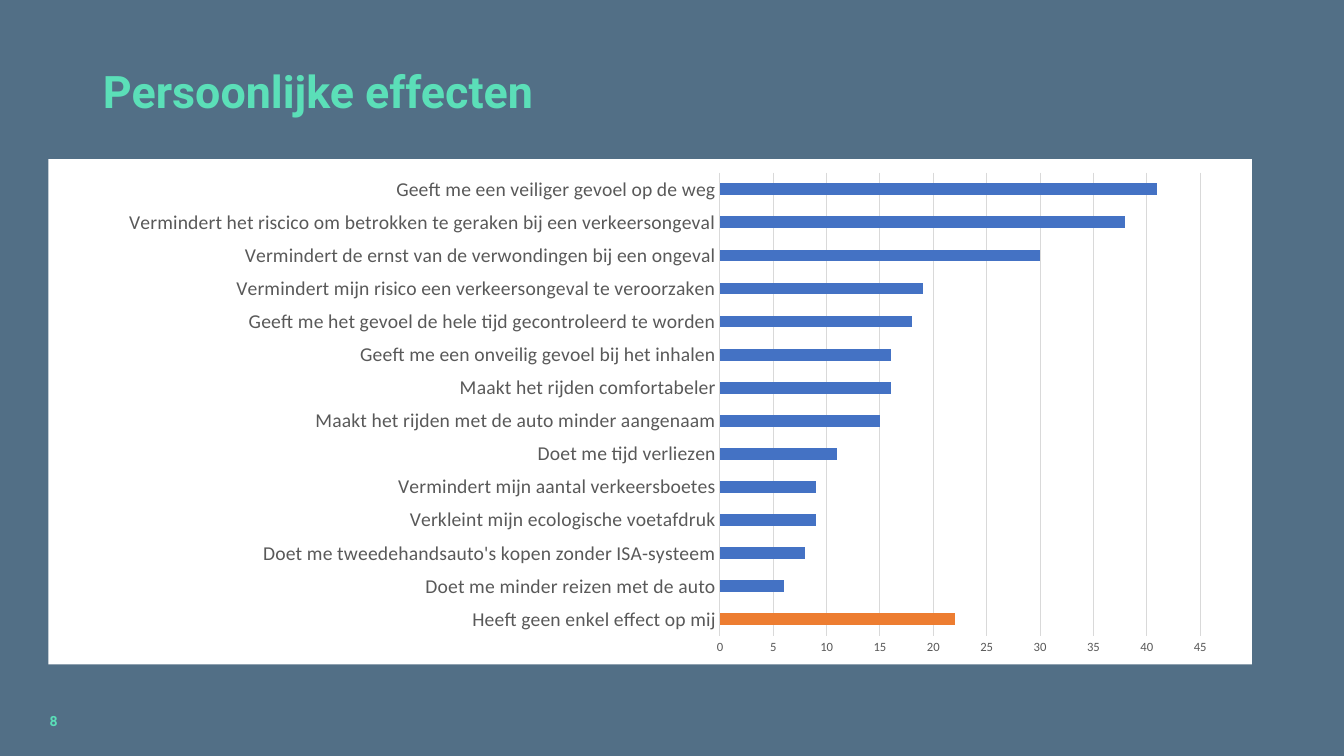
from lxml import etree
from pptx import Presentation
from pptx.chart.data import CategoryChartData
from pptx.dml.color import RGBColor
from pptx.enum.chart import XL_CHART_TYPE, XL_TICK_MARK
from pptx.enum.text import MSO_ANCHOR, MSO_AUTO_SIZE, PP_ALIGN
from pptx.oxml import parse_xml
from pptx.oxml.ns import nsdecls, qn
from pptx.util import Cm, Pt

BAR = XL_CHART_TYPE.BAR_CLUSTERED
NO_TICK = XL_TICK_MARK.NONE
LEFT = PP_ALIGN.LEFT
BOTTOM, MIDDLE = MSO_ANCHOR.BOTTOM, MSO_ANCHOR.MIDDLE
NO_FIT = MSO_AUTO_SIZE.NONE

SLATE = RGBColor(0x52, 0x6F, 0x86)
MINT = RGBColor(0x5B, 0xDF, 0xB8)
WHITE = RGBColor(0xFF, 0xFF, 0xFF)
BLACK = RGBColor(0, 0, 0)
GREY = RGBColor(0x59, 0x59, 0x59)
PALE = RGBColor(0xD9, 0xD9, 0xD9)
BLUE = RGBColor(0x44, 0x72, 0xC4)
ORANGE = RGBColor(0xED, 0x7D, 0x31)

EFFECTS = [
    ("Heeft geen enkel effect op mij", 22),
    ("Doet me minder reizen met de auto", 6),
    ("Doet me tweedehandsauto's kopen zonder ISA-systeem", 8),
    ("Verkleint mijn ecologische voetafdruk", 9),
    ("Vermindert mijn aantal verkeersboetes", 9),
    ("Doet me tijd verliezen", 11),
    ("Maakt het rijden met de auto minder aangenaam", 15),
    ("Maakt het rijden comfortabeler", 16),
    ("Geeft me een onveilig gevoel bij het inhalen", 16),
    ("Geeft me het gevoel de hele tijd gecontroleerd te worden", 18),
    ("Vermindert mijn risico een verkeersongeval te veroorzaken", 19),
    ("Vermindert de ernst van de verwondingen bij een ongeval", 30),
    ("Vermindert het riscico om betrokken te geraken bij een verkeersongeval", 38),
    ("Geeft me een veiliger gevoel op de weg", 41),
]


def set_font(font, name, size, color, bold=False):
    font.name, font.size, font.bold = name, Pt(size), bold
    font.color.rgb = color


def set_text(shape, text, size, anchor):
    frame = shape.text_frame
    frame.text = text
    frame.word_wrap = True
    frame.auto_size = NO_FIT
    frame.vertical_anchor = anchor
    line = frame.paragraphs[0]
    line.alignment = LEFT
    set_font(line.font, "Roboto", size, MINT, True)
    return frame


def add_title(slide, text):
    title = slide.shapes.title
    title.left, title.top = Cm(2.34), Cm(1.02)
    title.width, title.height = Cm(29.21), Cm(2.08)
    frame = set_text(title, text, 32, BOTTOM)
    frame.paragraphs[0].line_spacing = 0.9


def add_number(slide, text):
    box = slide.shapes.add_textbox(Cm(0.91), Cm(17.65), Cm(7.62), Cm(1.02))
    frame = set_text(box, text, 10, MIDDLE)
    frame.margin_left = Cm(0.34)


def fill_back(chart, color):
    """Fill the whole chart area, without an outline."""
    back = parse_xml(
        f'<c:spPr {nsdecls("c", "a")}><a:solidFill><a:srgbClr val="{color}"/>'
        '</a:solidFill><a:ln><a:noFill/></a:ln></c:spPr>')
    chart.element.find(qn("c:chart")).addnext(back)


def place_plot(chart, x, y, w, h):
    """Fix the inner plot area, in fractions of the chart."""
    area = chart.element.find(".//" + qn("c:plotArea"))
    for old in area.findall(qn("c:layout")):
        area.remove(old)
    layout = parse_xml(f'<c:layout {nsdecls("c")}/>')
    manual = etree.SubElement(layout, qn("c:manualLayout"))
    parts = {"layoutTarget": "inner", "xMode": "edge", "yMode": "edge",
             "x": x, "y": y, "w": w, "h": h}
    for tag, val in parts.items():
        etree.SubElement(manual, qn("c:" + tag)).set("val", str(val))
    area.insert(0, layout)


def style_axis(axis, size):
    axis.major_tick_mark = axis.minor_tick_mark = NO_TICK
    set_font(axis.tick_labels.font, "Calibri", size, GREY)


def style_line(line):
    line.color.rgb = PALE
    line.width = Pt(0.75)


def style_bars(plot):
    plot.gap_width = 182
    plot.vary_by_categories = False
    bars = plot.series[0]
    bars.invert_if_negative = False
    bars.format.fill.solid()
    bars.format.fill.fore_color.rgb = BLUE
    none = bars.points[0].format.fill
    none.solid()
    none.fore_color.rgb = ORANGE


def add_bars(slide, rows):
    data = CategoryChartData()
    data.categories = [name for name, _ in rows]
    data.add_series("Series 1", [val for _, val in rows])
    chart = slide.shapes.add_chart(
        BAR, Cm(1.22), Cm(4.01), Cm(30.33), Cm(12.73), data).chart
    chart.has_title = chart.has_legend = False
    set_font(chart.font, "Calibri", 10, BLACK)
    fill_back(chart, WHITE)
    place_plot(chart, 0.558, 0.027, 0.399, 0.917)
    style_bars(chart.plots[0])

    names, scale = chart.category_axis, chart.value_axis
    style_axis(names, 14)
    style_line(names.format.line)
    style_axis(scale, 9)
    scale.minimum_scale, scale.maximum_scale, scale.major_unit = 0, 45, 5
    scale.format.line.fill.background()
    scale.has_major_gridlines = True
    style_line(scale.major_gridlines.format.line)


def main():
    deck = Presentation()
    deck.slide_width, deck.slide_height = Cm(33.87), Cm(19.05)
    slide = deck.slides.add_slide(deck.slide_layouts[5])
    slide.background.fill.solid()
    slide.background.fill.fore_color.rgb = SLATE
    add_title(slide, "Persoonlijke effecten")
    add_number(slide, "8")
    add_bars(slide, EFFECTS)
    deck.save("out.pptx")


if __name__ == "__main__":
    main()
